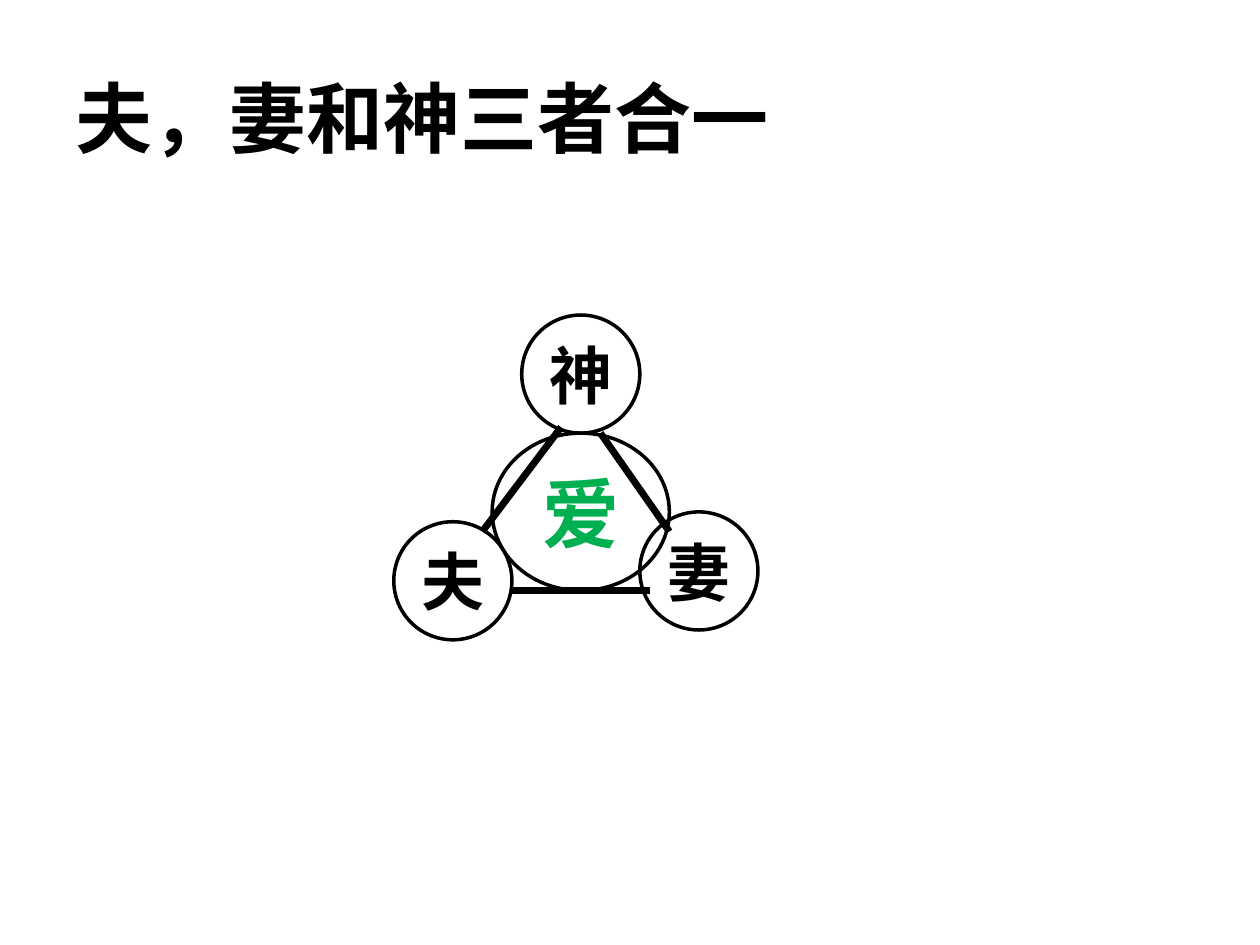
from pptx import Presentation
from pptx.dml.color import RGBColor
from pptx.enum.shapes import MSO_CONNECTOR as Connector, MSO_SHAPE as Shape
from pptx.enum.text import MSO_ANCHOR as Anchor, PP_ALIGN as Align
from pptx.oxml.ns import qn
from pptx.util import Pt
from lxml.etree import SubElement

BLACK = RGBColor(0x00, 0x00, 0x00)
GREEN = RGBColor(0x00, 0xB0, 0x50)
PERSON_SIZE = 67.5

# Left, top of each person's circle
PERSONS = {"夫": (225, 298.12), "妻": (365.62, 292.5), "神": (298.12, 180)}
# Start and end of each bond between two persons
BONDS = [
    ((292.5, 337.5), (371.25, 337.5)),
    ((275.62, 303.75), (320.62, 244.12)),
    ((382.5, 303.75), (343.12, 247.5)),
]


def set_text(holder, text, size, color, align, wrap):
    frame = holder.text_frame
    frame.word_wrap = wrap
    frame.vertical_anchor = Anchor.MIDDLE
    paragraph = frame.paragraphs[0]
    paragraph.alignment = align
    run = paragraph.add_run()
    run.text = text
    font_format = {"name": "Calibri", "size": Pt(size), "bold": True}
    for attribute, value in font_format.items():
        setattr(run.font, attribute, value)
    run.font.color.rgb = color


def add_title(slide, text):
    title = slide.shapes.add_textbox(Pt(36), Pt(21.6), Pt(648), Pt(90))
    set_text(title, text, 44, BLACK, Align.LEFT, True)


def add_bond(slide, start, end):
    bond = slide.shapes.add_connector(
        Connector.STRAIGHT, *(Pt(value) for value in start + end))
    bond.line.color.rgb = BLACK
    bond.line.width = Pt(4)
    SubElement(bond._element.spPr, qn("a:effectLst"))


def add_circle(slide, text, box, size, color):
    circle = slide.shapes.add_shape(Shape.OVAL, *(Pt(value) for value in box))
    circle.shadow.inherit = False
    circle.fill.background()
    circle.line.color.rgb = BLACK
    circle.line.width = Pt(2)
    set_text(circle, text, size, color, Align.CENTER, False)


def main():
    deck = Presentation()
    deck.slide_width, deck.slide_height = Pt(720), Pt(540)
    slide = deck.slides.add_slide(deck.slide_layouts[6])

    add_title(slide, "夫，妻和神三者合一")

    # Triangle of bonds
    for start, end in BONDS:
        add_bond(slide, start, end)

    # Persons at the corners, love in the middle
    for person, corner in PERSONS.items():
        add_circle(slide, person, (*corner, PERSON_SIZE, PERSON_SIZE), 36, BLACK)
    add_circle(slide, "爱", (281.25, 247.5, 101.25, 90), 44, GREEN)

    deck.save("out.pptx")


if __name__ == "__main__":
    main()
